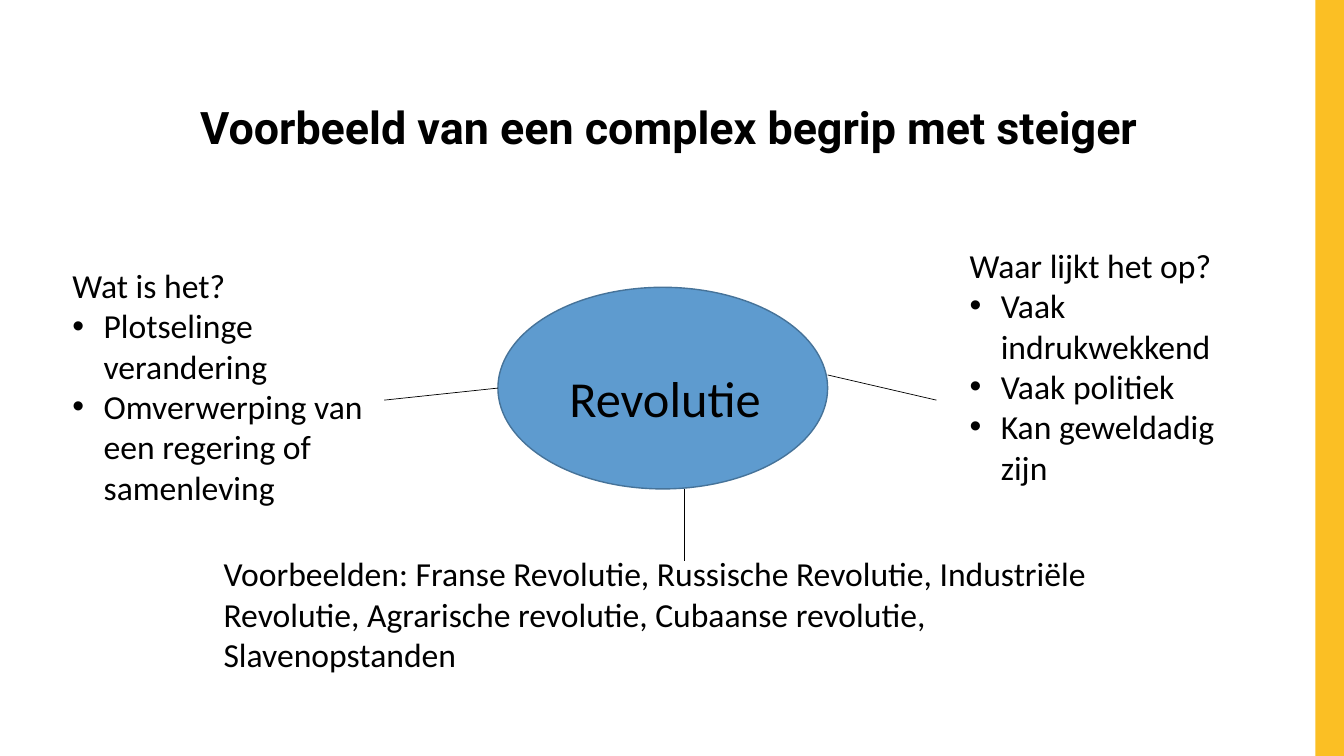
from lxml.etree import SubElement
from pptx import Presentation
from pptx.dml.color import RGBColor
from pptx.enum.shapes import MSO_CONNECTOR, MSO_SHAPE
from pptx.enum.text import MSO_ANCHOR, PP_ALIGN
from pptx.oxml.ns import qn
from pptx.util import Inches, Pt

WIDE, HIGH = Inches(13.33), Inches(7.5)
BLACK = "000000"
BAR = (97.88, 0, 2.12, 100)
OVAL = (37.05, 38, 24.53, 26.67)

TITLE = ((10.2, 9.87, 79.2, 14.67), "Voorbeeld van een complex begrip met steiger")
CORE = ((41.63, 47.87, 16.8, 9.47), "Revolutie")
NOTES = [
    ((4.65, 34.4, 23.93, 33.6), "Wat is het?",
     ["Plotselinge verandering", "Omverwerping van een regering of samenleving"]),
    ((71.4, 31.73, 20.4, 33.6), "Waar lijkt het op?",
     ["Vaak indrukwekkend", "Vaak politiek", "Kan geweldadig zijn"]),
    ((15.9, 72.53, 70.05, 17.47),
     "Voorbeelden: Franse Revolutie, Russische Revolutie, Industriële Revolutie, "
     "Agrarische revolutie, Cubaanse revolutie, Slavenopstanden", []),
]
LINKS = [
    (28.58, 52.93, OVAL[0], OVAL[1] + OVAL[3] / 2),
    (OVAL[0] + OVAL[2], 49.6, 69.68, 52.93),
    (50.93, OVAL[1] + OVAL[3], 50.93, 74.27),
]


def tint(code):
    return RGBColor.from_string(code)


def place(box):
    """Turn percentages of the slide into lengths, across and down in turn."""
    return [round(part * side / 100) for part, side in zip(box, (WIDE, HIGH) * 2)]


def bullet(para):
    props = para._p.get_or_add_pPr()
    props.set("marL", str(Inches(0.31)))
    props.set("indent", str(-Inches(0.31)))
    SubElement(props, qn("a:buFont")).set("typeface", "Arial")
    SubElement(props, qn("a:buChar")).set("char", "•")


def write(slide, box, text, items=(), size=24, font="Calibri", bold=False,
          align=PP_ALIGN.LEFT, anchor=MSO_ANCHOR.TOP, space=1.0):
    frame = slide.shapes.add_textbox(*place(box)).text_frame
    frame.word_wrap = True
    frame.vertical_anchor = anchor
    for spot, line in enumerate([text, *items]):
        para = frame.add_paragraph() if spot else frame.paragraphs[0]
        if spot:
            bullet(para)
        para.alignment = align
        para.line_spacing = space
        run = para.add_run()
        run.text = line
        run.font.name, run.font.size, run.font.bold = font, Pt(size), bold
        run.font.color.rgb = tint(BLACK)


def draw(slide, kind, box, fill, edge=None):
    shape = slide.shapes.add_shape(kind, *place(box))
    shape.shadow.inherit = False
    shape.fill.solid()
    shape.fill.fore_color.rgb = tint(fill)
    if edge:
        shape.line.color.rgb = tint(edge)
        shape.line.width = Pt(1)
    else:
        shape.line.fill.background()


def link(slide, ends):
    wire = slide.shapes.add_connector(MSO_CONNECTOR.STRAIGHT, *place(ends))
    wire.line.color.rgb = tint(BLACK)
    wire.line.width = Pt(0.5)
    SubElement(wire._element.spPr, qn("a:effectLst"))


def main():
    deck = Presentation()
    deck.slide_width, deck.slide_height = WIDE, HIGH
    slide = deck.slides.add_slide(deck.slide_layouts[6])
    draw(slide, MSO_SHAPE.RECTANGLE, BAR, "FBBF24")
    write(slide, *TITLE, size=32, font="Roboto", bold=True,
          align=PP_ALIGN.CENTER, anchor=MSO_ANCHOR.MIDDLE, space=0.9)
    draw(slide, MSO_SHAPE.OVAL, OVAL, "5E9BCF", edge="467399")
    write(slide, *CORE, size=36)
    for note in NOTES:
        write(slide, *note)
    for ends in LINKS:
        link(slide, ends)
    deck.save("out.pptx")


if __name__ == "__main__":
    main()
